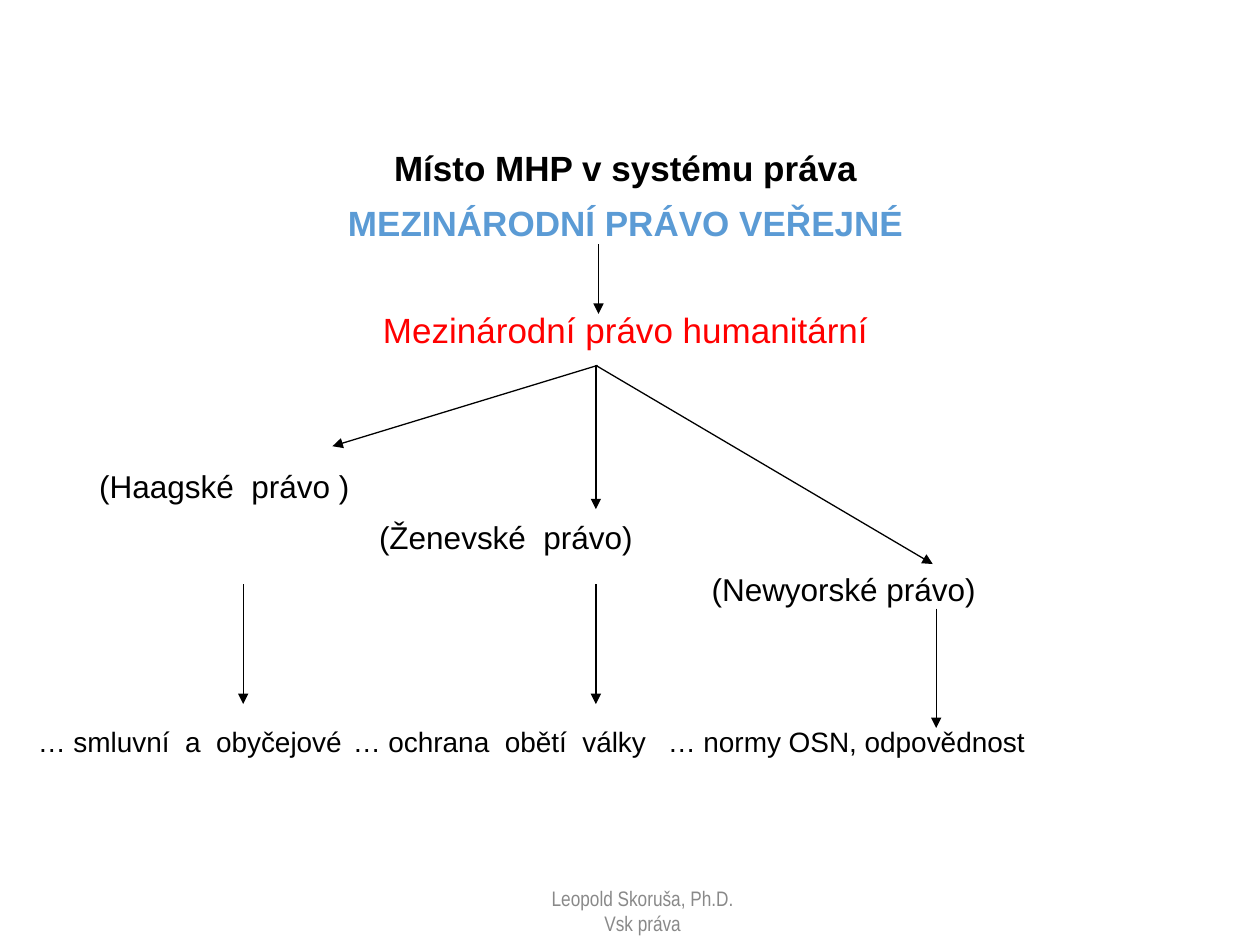
"""Build the slide on the place of humanitarian law in the legal system."""
from lxml.etree import SubElement
from pptx import Presentation
from pptx.dml.color import RGBColor
from pptx.enum.shapes import MSO_CONNECTOR
from pptx.enum.text import MSO_ANCHOR, MSO_AUTO_SIZE, PP_ALIGN
from pptx.oxml.ns import qn
from pptx.util import Pt


def color(text):
    return RGBColor.from_string(text)


def style(para, size, tone, bold=False, align=PP_ALIGN.CENTER, face="Arial"):
    para.alignment = align
    font = para.font
    font.name, font.size, font.bold = face, Pt(size), bold
    font.color.rgb = color(tone)


deck = Presentation()
deck.slide_width, deck.slide_height = Pt(720), Pt(540)
slide = deck.slides.add_slide(deck.slide_layouts[1])
title, body = slide.shapes.title, slide.placeholders[1]

for box, top, height in [(title, 82.8, 31), (body, 114.2, 371)]:
    box.left, box.top, box.width, box.height = Pt(14.4), Pt(top), Pt(686.2), Pt(height)
    box.text_frame.auto_size = MSO_AUTO_SIZE.NONE
    box.text_frame.vertical_anchor = MSO_ANCHOR.TOP

title.text_frame.text = "Místo MHP v systému práva"
head = title.text_frame.paragraphs[0]
head.line_spacing = 0.9
style(head, 20, "000000", True)

mid, left = PP_ALIGN.CENTER, PP_ALIGN.LEFT
lines = [
    ("MEZINÁRODNÍ PRÁVO VEŘEJNÉ", 20, "5B9BD5", True, mid, 0, 0),
    ("Mezinárodní právo humanitární", 20, "FF0000", False, mid, 0, 39.4),
    ("(Haagské  právo )", 18, "000000", False, left, 35, 68.8),
    ("(Ženevské  právo)", 18, "000000", False, left, 195, 10),
    ("(Newyorské právo)", 18, "000000", False, left, 385, 10),
    ("… smluvní  a  obyčejové\t… ochrana  obětí  války\t… normy OSN, odpovědnost",
     16, "000000", False, left, 0, 68.8),
]
body.text_frame.text = "\n".join(line[0] for line in lines)
for para, (text, size, tone, bold, align, indent, gap) in zip(body.text_frame.paragraphs, lines):
    para.line_spacing, para.space_before = 0.9, Pt(gap)
    props = para._p.get_or_add_pPr()
    props.set("marL", str(Pt(indent)))
    props.set("indent", "0")
    SubElement(props, qn("a:buNone"))
    if "\t" in text:
        tabs = SubElement(props, qn("a:tabLst"))
        for stop in (191, 372):
            SubElement(tabs, qn("a:tab"), pos=str(Pt(stop)), algn="l")
    style(para, size, tone, bold, align)

arrows = [
    (342, 139.7, 342, 179.3),
    (341.5, 208.8, 190, 255),
    (340.5, 208.8, 340.5, 291),
    (340.5, 208.8, 533, 322.3),
    (139, 334, 139, 402.3),
    (340.5, 334, 340.5, 402.3),
    (535, 347.8, 535, 416),
]
for ends in arrows:
    arrow = slide.shapes.add_connector(MSO_CONNECTOR.STRAIGHT, *map(Pt, ends))
    arrow.line.color.rgb = color("000000")
    arrow.line.width = Pt(0.75)
    SubElement(arrow.line._get_or_add_ln(), qn("a:tailEnd"), type="triangle")
    SubElement(arrow._element.spPr, qn("a:effectLst"))

foot = slide.shapes.add_textbox(Pt(238.3), Pt(500.4), Pt(257.8), Pt(39.6)).text_frame
foot.word_wrap = True
foot.vertical_anchor = MSO_ANCHOR.MIDDLE
foot.text = "Leopold Skoruša, Ph.D.\nVsk práva"
for para in foot.paragraphs:
    style(para, 12, "898989", face="Arial Narrow")

deck.save("out.pptx")
